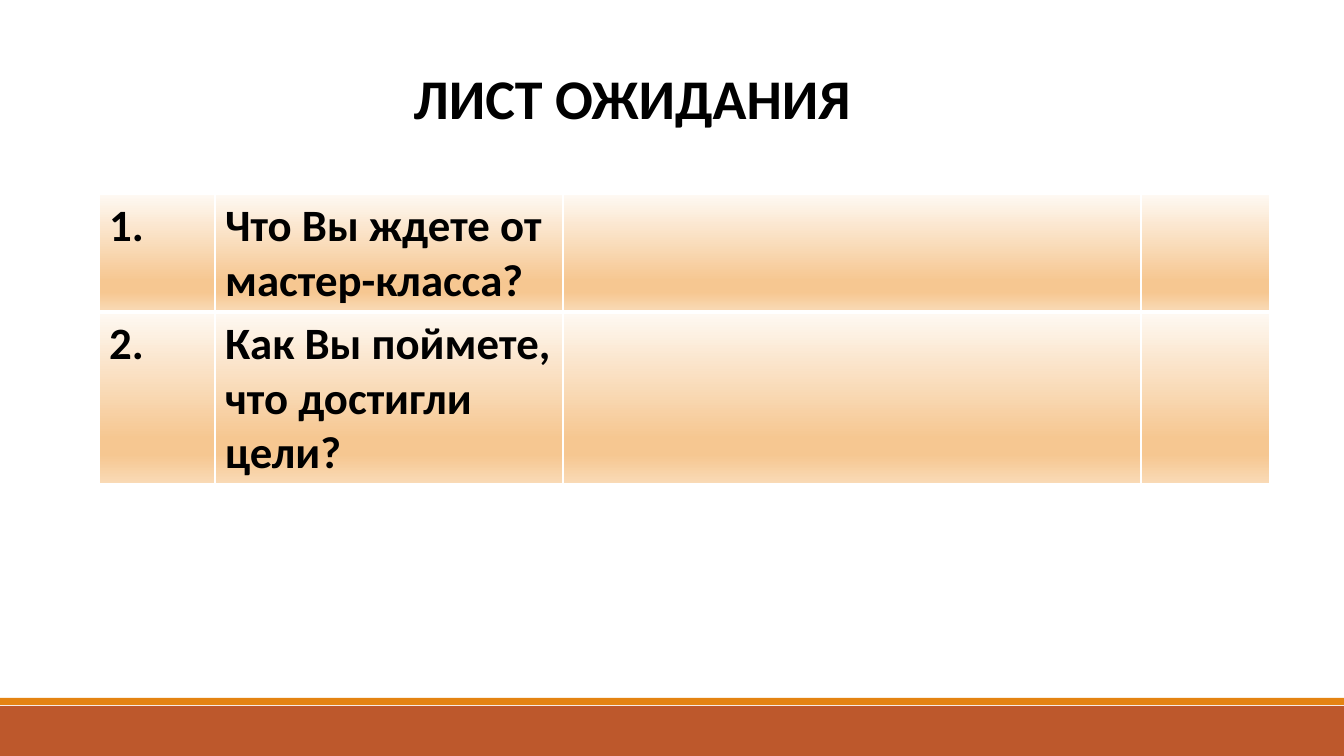
import pptx
import pptx.dml.color
import pptx.enum.shapes
import pptx.enum.text
import pptx.oxml
import pptx.oxml.ns
import pptx.util

PX = 914400 / 100.8
WIDTH, HEIGHT = 1344, 756
FONT = "Calibri"
GRADIENT = [(0, "FEF9F3"), (74, "F6C791"), (83, "F6C791"), (100, "F9DAB6")]
QUESTIONS = ["Что Вы ждете от мастер-класса?", "Как Вы поймете, что достигли цели?"]
COLUMN_WIDTHS = [116, 348, 578, 129]
ROW_HEIGHTS = [117, 172]


def px(*lengths):
    return [pptx.util.Emu(round(length * PX)) for length in lengths]


def add_bold_run(paragraph, text, size):
    run = paragraph.add_run()
    run.text = text
    run.font.name = FONT
    run.font.size = pptx.util.Pt(size)
    run.font.bold = True
    run.font.color.rgb = pptx.dml.color.RGBColor.from_string("000000")


presentation = pptx.Presentation()
presentation.slide_width, presentation.slide_height = px(WIDTH, HEIGHT)
slide = presentation.slides.add_slide(presentation.slide_layouts[5])

# Footer bars
for top, height, color in [(706, 50, "BD582C"), (698, 7, "E48312")]:
    bar = slide.shapes.add_shape(
        pptx.enum.shapes.MSO_SHAPE.RECTANGLE, *px(0, top, WIDTH, height))
    bar.shadow.inherit = False
    bar.fill.solid()
    bar.fill.fore_color.rgb = pptx.dml.color.RGBColor.from_string(color)
    bar.line.fill.background()

# Title
title = slide.shapes.title
title.left, title.top, title.width, title.height = px(401, 58, 462, 78)
title.text_frame.word_wrap = False
title.text_frame.auto_size = pptx.enum.text.MSO_AUTO_SIZE.SHAPE_TO_FIT_TEXT
title.text_frame.vertical_anchor = pptx.enum.text.MSO_ANCHOR.TOP
heading = title.text_frame.paragraphs[0]
heading.alignment = pptx.enum.text.PP_ALIGN.CENTER
add_bold_run(heading, "ЛИСТ ОЖИДАНИЯ", 40)

# Question table
table = slide.shapes.add_table(
    len(ROW_HEIGHTS), len(COLUMN_WIDTHS),
    *px(99, 194, sum(COLUMN_WIDTHS), sum(ROW_HEIGHTS))).table
table.first_row = False
table.horz_banding = False
for column, width in zip(table.columns, px(*COLUMN_WIDTHS)):
    column.width = width
for row, height in zip(table.rows, px(*ROW_HEIGHTS)):
    row.height = height

namespace = pptx.oxml.ns.nsdecls("a")
stops = "".join(
    f'<a:gs pos="{position * 1000}"><a:srgbClr val="{color}"/></a:gs>'
    for position, color in GRADIENT)
gradient_xml = (f'<a:gradFill {namespace} rotWithShape="1"><a:gsLst>{stops}</a:gsLst>'
                '<a:lin ang="5400000" scaled="0"/></a:gradFill>')

for row_index, row in enumerate(table.rows):
    # The line between the two rows is the only thick one
    thick_side = "B" if row_index == 0 else "T"
    for cell in row.cells:
        properties = cell._tc.get_or_add_tcPr()
        for side in "LRTB":
            line_width = pptx.util.Pt(3 if side == thick_side else 1)
            properties.append(pptx.oxml.parse_xml(
                f'<a:ln{side} {namespace} w="{line_width}"><a:solidFill>'
                f'<a:srgbClr val="FFFFFF"/></a:solidFill></a:ln{side}>'))
        properties.append(pptx.oxml.parse_xml(gradient_xml))

for row_index, question in enumerate(QUESTIONS):
    for column_index, text in enumerate([f"{row_index + 1}.", question]):
        cell = table.cell(row_index, column_index)
        add_bold_run(cell.text_frame.paragraphs[0], text, 32)

presentation.save("out.pptx")
